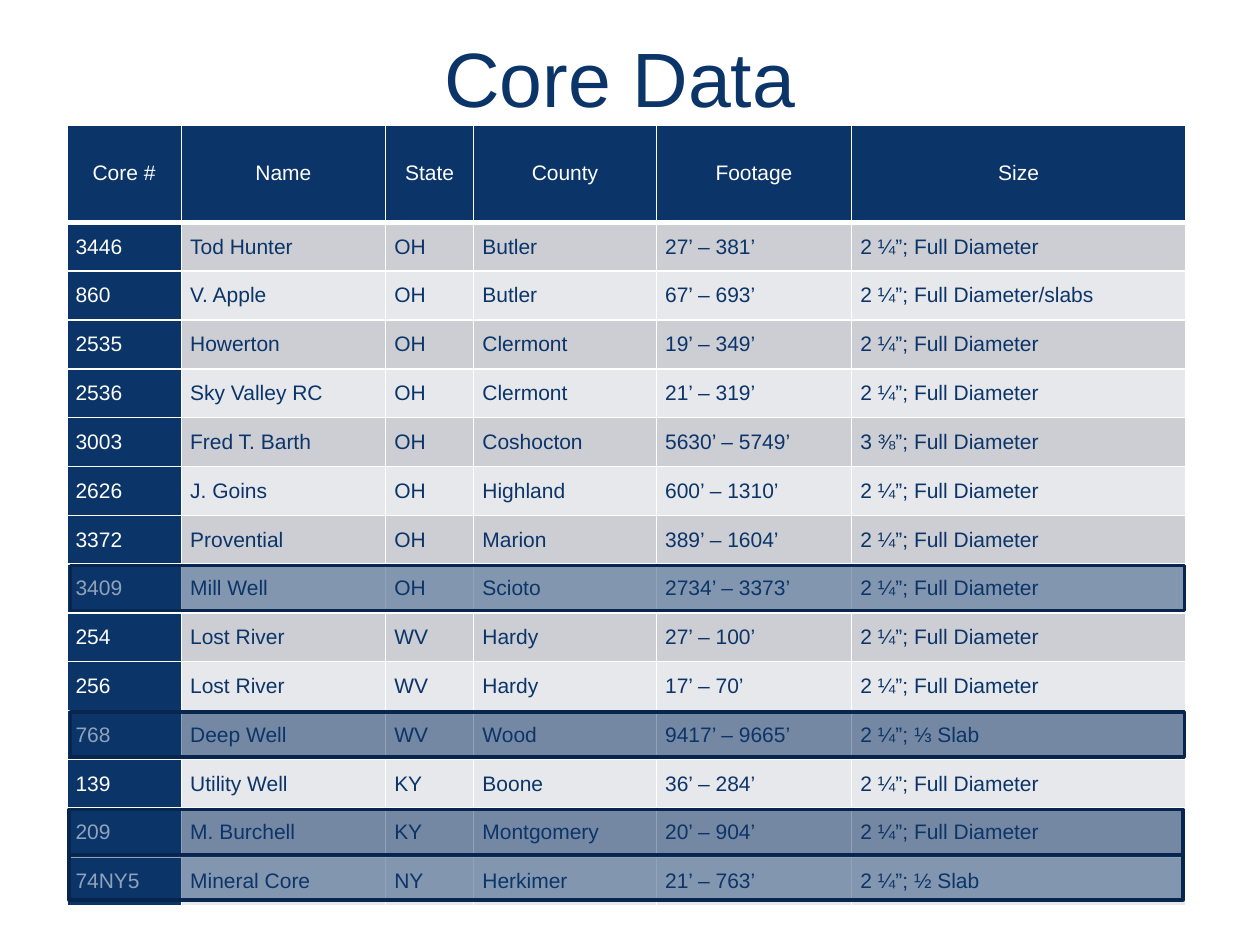
from lxml.etree import SubElement
from pptx import Presentation
from pptx.dml.color import RGBColor
from pptx.enum.shapes import MSO_SHAPE
from pptx.enum.text import MSO_ANCHOR, PP_ALIGN
from pptx.oxml.ns import qn
from pptx.util import Inches, Pt

NAVY, DARK, WHITE = "0B3468", "08264D", "FFFFFF"
BANDS = ["E7E8EB", "CCCED4"]  # even rows, odd rows


def rgb(color):
    return RGBColor.from_string(color)


def write(tf, text, size=12, color=NAVY, align=PP_ALIGN.LEFT):
    p = tf.paragraphs[0]
    p.alignment = align
    r = p.add_run()
    r.text = text
    r.font.name, r.font.size = "Arial", Pt(size)
    r.font.color.rgb = rgb(color)


prs = Presentation()
prs.slide_width, prs.slide_height = Inches(10), Inches(7.5)
s = prs.slides.add_slide(prs.slide_layouts[6])

# Grid: 16 equal units of height, the header takes two
LEFT, TOP, WIDTH, HEIGHT = 0.53, 0.99, 8.89, 6.2
UNIT = HEIGHT / 16
COLUMNS = [0.91, 1.62, 0.7, 1.45, 1.55, 2.65]
FULL = "2 ¼”; Full Diameter"
rows = [
    ("Core #", "Name", "State", "County", "Footage", "Size"),
    ("3446", "Tod Hunter", "OH", "Butler", "27’ – 381’", FULL),
    ("860", "V. Apple", "OH", "Butler", "67’ – 693’", FULL + "/slabs"),
    ("2535", "Howerton", "OH", "Clermont", "19’ – 349’", FULL),
    ("2536", "Sky Valley RC", "OH", "Clermont", "21’ – 319’", FULL),
    ("3003", "Fred T. Barth", "OH", "Coshocton", "5630’ – 5749’", "3 ⅜”; Full Diameter"),
    ("2626", "J. Goins", "OH", "Highland", "600’ – 1310’", FULL),
    ("3372", "Provential", "OH", "Marion", "389’ – 1604’", FULL),
    ("3409", "Mill Well", "OH", "Scioto", "2734’ – 3373’", FULL),
    ("254", "Lost River", "WV", "Hardy", "27’ – 100’", FULL),
    ("256", "Lost River", "WV", "Hardy", "17’ – 70’", FULL),
    ("768", "Deep Well", "WV", "Wood", "9417’ – 9665’", "2 ¼”; ⅓ Slab"),
    ("139", "Utility Well", "KY", "Boone", "36’ – 284’", FULL),
    ("209", "M. Burchell", "KY", "Montgomery", "20’ – 904’", FULL),
    ("74NY5", "Mineral Core", "NY", "Herkimer", "21’ – 763’", "2 ¼”; ½ Slab"),
]

# Core table
table = s.shapes.add_table(len(rows), len(COLUMNS), Inches(LEFT), Inches(TOP),
                           Inches(WIDTH), Inches(HEIGHT)).table
for column, width in zip(table.columns, COLUMNS):
    column.width = Inches(width)
for i, row in enumerate(rows):
    header = i == 0
    table.rows[i].height = Inches(UNIT * (2 if header else 1))
    for j, text in enumerate(row):
        cell = table.cell(i, j)
        dark = header or j == 0
        cell.vertical_anchor = MSO_ANCHOR.MIDDLE
        cell.margin_left = cell.margin_right = Inches(0.07)
        cell.margin_top = cell.margin_bottom = 0
        # White borders, heavier under the header
        for side in "LRTB":
            weight = 3 if header and side == "B" else 1
            ln = SubElement(cell._tc.get_or_add_tcPr(), qn(f"a:ln{side}"), w=str(Pt(weight)))
            SubElement(SubElement(ln, qn("a:solidFill")), qn("a:srgbClr"), val=WHITE)
        cell.fill.solid()
        cell.fill.fore_color.rgb = rgb(NAVY if dark else BANDS[i % 2])
        write(cell.text_frame, text, color=WHITE if dark else NAVY,
              align=PP_ALIGN.CENTER if header else PP_ALIGN.LEFT)

# Title
tf = s.shapes.add_textbox(Inches(0.42), Inches(0.17), Inches(9), Inches(0.87)).text_frame
tf.word_wrap = True
tf.vertical_anchor = MSO_ANCHOR.MIDDLE
write(tf, "Core Data", size=44, align=PP_ALIGN.CENTER)

# Translucent highlights: table row, offset from its top left corner
for i, dx, dy in [(13, 0.02, 0.01), (8, 0.03, 0.01), (11, 0.03, 0.01), (14, 0.02, -0.02)]:
    sp = s.shapes.add_shape(MSO_SHAPE.RECTANGLE, Inches(LEFT + dx),
                            Inches(TOP + (i + 1) * UNIT + dy), Inches(8.84), Inches(0.36))
    sp.shadow.inherit = False
    sp.fill.solid()
    sp.fill.fore_color.rgb = rgb(NAVY)
    SubElement(sp.fill._xPr.find(".//" + qn("a:srgbClr")), qn("a:alpha"), val="45000")
    sp.line.color.rgb = rgb(DARK)
    sp.line.width = Pt(2)

prs.save("out.pptx")
